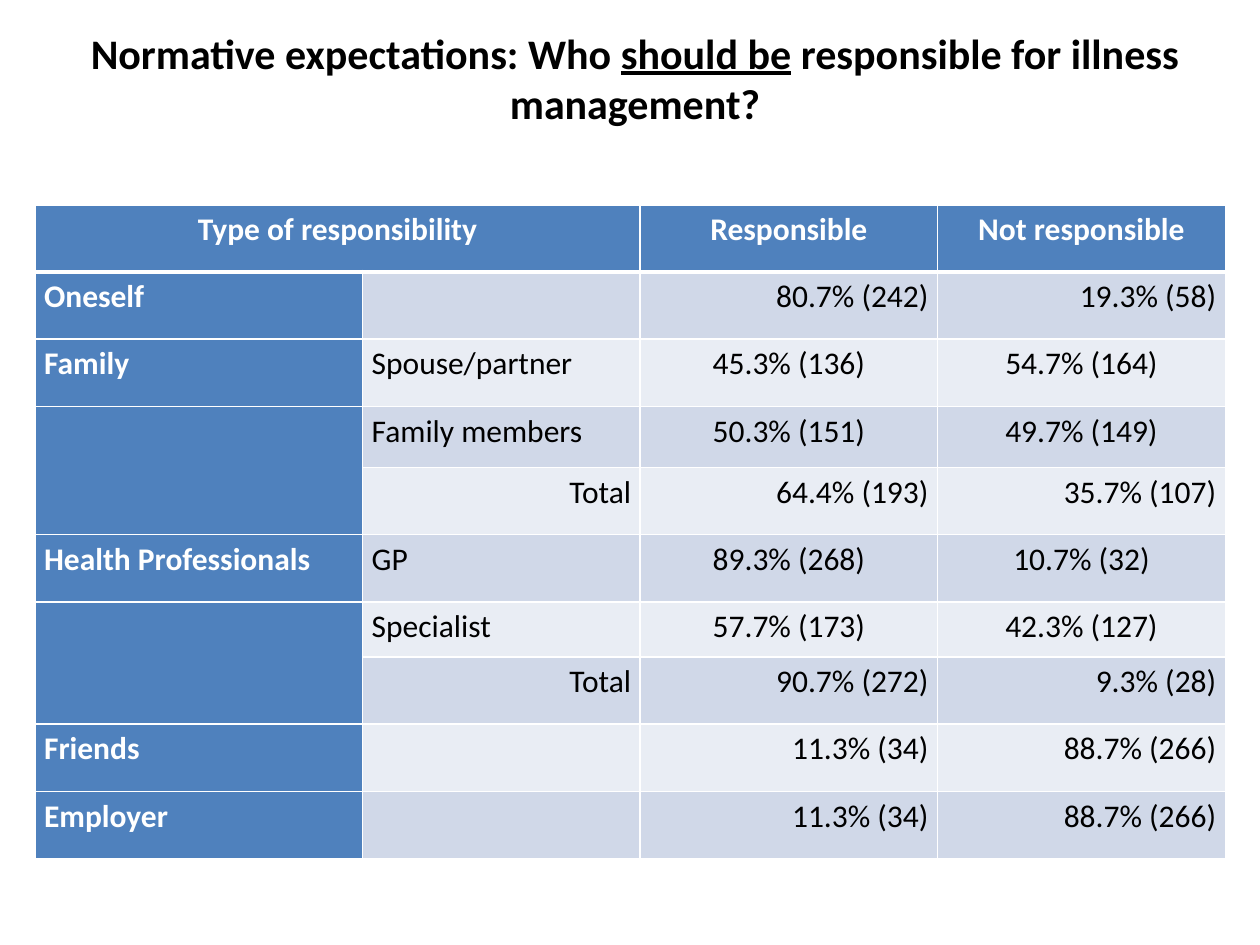
from lxml import etree
from pptx import Presentation
from pptx.dml.color import RGBColor
from pptx.enum import text
from pptx.oxml import ns
from pptx.util import Pt

BLUE = RGBColor(0x4F, 0x81, 0xBD)
BAND_DARK = RGBColor(0xD0, 0xD8, 0xE8)
BAND_LIGHT = RGBColor(0xE9, 0xED, 0xF4)
WHITE = RGBColor(0xFF, 0xFF, 0xFF)
BLACK = RGBColor(0, 0, 0)

FONT = "Calibri"
LEFT, CENTER, RIGHT = (text.PP_ALIGN.LEFT, text.PP_ALIGN.CENTER,
                       text.PP_ALIGN.RIGHT)

COLUMN_WIDTHS = [187.2, 158.6, 170, 164.4]
ROW_HEIGHT = 38.4
SHORT_ROWS = {3: 35, 6: 31.5}

ANSWERS = [
    ("Type of responsibility", "", "Responsible", "Not responsible"),
    ("Oneself", "", "80.7% (242)", "19.3% (58)"),
    ("Family", "Spouse/partner", "45.3% (136)", "54.7% (164)"),
    ("", "Family members", "50.3% (151)", "49.7% (149)"),
    ("", "Total", "64.4% (193)", "35.7% (107)"),
    ("Health Professionals", "GP", "89.3% (268)", "10.7% (32)"),
    ("", "Specialist", "57.7% (173)", "42.3% (127)"),
    ("", "Total", "90.7% (272)", "9.3% (28)"),
    ("Friends", "", "11.3% (34)", "88.7% (266)"),
    ("Employer", "", "11.3% (34)", "88.7% (266)"),
]


def set_font(paragraph, size, color, bold):
    font = paragraph.font
    font.name, font.size, font.bold = FONT, Pt(size), bold
    font.color.rgb = color


def add_title(slide):
    title = slide.shapes.add_textbox(Pt(36.7), Pt(11.5), Pt(652.3), Pt(65.5))
    frame = title.text_frame
    frame.word_wrap = True
    frame.vertical_anchor = text.MSO_ANCHOR.MIDDLE
    heading = frame.paragraphs[0]
    heading.alignment = CENTER
    set_font(heading, 24, BLACK, True)
    for words, underlined in [("Normative expectations: Who ", False),
                              ("should be", True),
                              (" responsible for illness management?", False)]:
        run = heading.add_run()
        run.text = words
        run.font.underline = underlined


def set_borders(cell, top, bottom):
    """White cell edges; top and bottom give their widths in points."""
    properties = cell._tc.get_or_add_tcPr()
    for side, width in (("L", 1), ("R", 1), ("T", top), ("B", bottom)):
        line = etree.SubElement(properties, ns.qn(f"a:ln{side}"),
                                w=str(Pt(width)))
        fill = etree.SubElement(line, ns.qn("a:solidFill"))
        etree.SubElement(fill, ns.qn("a:srgbClr"), val=str(WHITE))


def cell_alignment(row, column, subtype):
    if row == 0:
        return CENTER
    if column == 0:
        return LEFT
    if column == 1:
        return RIGHT if subtype == "Total" else LEFT
    # Figures of a single subtype are centred, overall figures sit right
    return RIGHT if subtype in ("", "Total") else CENTER


def fill_cell(cell, row, column, words, subtype):
    is_heading = row == 0 or column == 0
    set_borders(cell, 3 if row == 1 else 1, 3 if row == 0 else 1)
    cell.fill.solid()
    band = BAND_DARK if row % 2 else BAND_LIGHT
    cell.fill.fore_color.rgb = BLUE if is_heading else band
    cell.margin_left = cell.margin_right = Pt(5.2)
    cell.margin_top = cell.margin_bottom = 0
    cell.text = words
    paragraph = cell.text_frame.paragraphs[0]
    paragraph.alignment = cell_alignment(row, column, subtype)
    paragraph.line_spacing = 1.15
    set_font(paragraph, 18, WHITE if is_heading else BLACK, is_heading)


def add_answers_table(slide):
    heights = [SHORT_ROWS.get(row, ROW_HEIGHT) for row in range(len(ANSWERS))]
    answers = slide.shapes.add_table(
        len(heights), len(COLUMN_WIDTHS), Pt(20), Pt(117),
        Pt(sum(COLUMN_WIDTHS)), Pt(sum(heights))).table
    for column, width in zip(answers.columns, COLUMN_WIDTHS):
        column.width = Pt(width)
    for row, (height, entries) in enumerate(zip(heights, ANSWERS)):
        answers.rows[row].height = Pt(height)
        for column, words in enumerate(entries):
            fill_cell(answers.cell(row, column), row, column, words, entries[1])

    # Header over both label columns, then the cells below each group name
    answers.cell(0, 0).merge(answers.cell(0, 1))
    for row in (3, 6):
        answers.cell(row, 0).merge(answers.cell(row + 1, 0))


def main():
    deck = Presentation()
    deck.slide_width, deck.slide_height = Pt(720), Pt(540)
    slide = deck.slides.add_slide(deck.slide_layouts[6])
    add_answers_table(slide)
    add_title(slide)
    deck.save("out.pptx")


if __name__ == "__main__":
    main()
